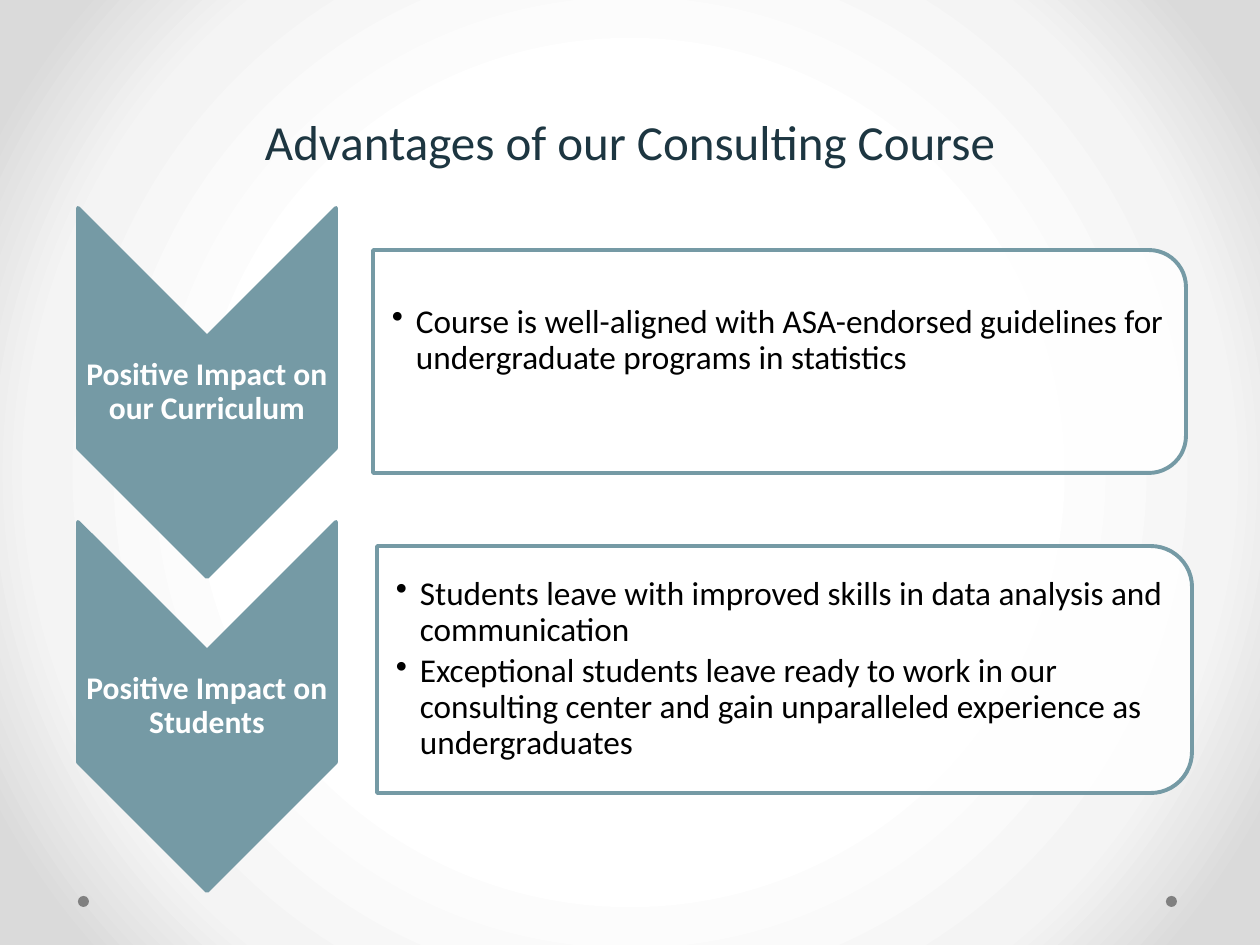
from lxml.etree import SubElement
from pptx import Presentation
from pptx.dml.color import RGBColor
from pptx.enum.shapes import MSO_SHAPE as Shape
from pptx.enum.text import MSO_ANCHOR as Anchor, PP_ALIGN as Align
from pptx.oxml.ns import qn
from pptx.util import Emu, Pt

WHITE = RGBColor(0xFF, 0xFF, 0xFF)
BLACK = RGBColor(0x00, 0x00, 0x00)
NAVY = RGBColor(0x1D, 0x36, 0x41)
TEAL = RGBColor(0x75, 0x9A, 0xA5)
GRAY = RGBColor(0x80, 0x80, 0x80)
PALE = RGBColor(0xF4, 0xF4, 0xF4)
SILVER = RGBColor(0xDA, 0xDA, 0xDA)


def px(length):
    return Emu(round(length * 914400 / 126))


class SlideBuilder:
    font = "Calibri"

    def __init__(self, deck):
        self.page = deck.slides.add_slide(deck.slide_layouts[6])

    def radial_background(self, stops):
        fill = self.page.background.fill
        fill.gradient()
        gradient = self.page.element.find(".//" + qn("a:gradFill"))
        for child in list(gradient):
            gradient.remove(child)
        stop_list = SubElement(gradient, qn("a:gsLst"))
        for percent, color in stops:
            stop = SubElement(stop_list, qn("a:gs"), pos=str(percent * 1000))
            SubElement(stop, qn("a:srgbClr"), val=str(color))
        circle = SubElement(gradient, qn("a:path"), path="circle")
        SubElement(circle, qn("a:fillToRect"), l="50000", t="50000", r="50000", b="50000")

    def shape(self, kind, left, top, width, height, color):
        shape = self.page.shapes.add_shape(kind, px(left), px(top), px(width), px(height))
        shape.shadow.inherit = False
        shape.fill.solid()
        shape.fill.fore_color.rgb = color
        shape.line.fill.background()
        return shape

    def turned_shape(self, kind, left, top, width, height, color):
        shift = (width - height) / 2
        shape = self.shape(kind, left + shift, top - shift, height, width, color)
        shape.rotation = 90
        shape.line.color.rgb = TEAL
        shape.line.width = Pt(2.25)
        SubElement(shape.element.spPr.find(qn("a:ln")), qn("a:round"))
        return shape

    def chevron(self, left, top, width, height):
        self.turned_shape(Shape.CHEVRON, left, top, width, height, TEAL)

    def panel(self, left, top, width, height):
        panel = self.turned_shape(Shape.ROUND_2_SAME_RECTANGLE, left, top, width, height, WHITE)
        color = panel.element.spPr.find(qn("a:solidFill"))[0]
        SubElement(color, qn("a:alpha"), val="90000")

    def text_box(self, left, top, width, height, anchor=Anchor.MIDDLE, insets=(1, 1, 1, 1)):
        box = self.page.shapes.add_textbox(px(left), px(top), px(width), px(height))
        frame = box.text_frame
        frame.word_wrap = True
        frame.vertical_anchor = anchor
        (frame.margin_left, frame.margin_top,
         frame.margin_right, frame.margin_bottom) = map(px, insets)
        return frame

    def add_span(self, para, text, size, color, bold=False):
        span = para.add_run()
        span.text = text
        span.font.name = self.font
        span.font.size = Pt(size)
        span.font.color.rgb = color
        span.font.bold = bold

    def title(self, left, top, width, height, text):
        frame = self.text_box(left, top, width, height, Anchor.TOP, (13, 6, 13, 6))
        para = frame.paragraphs[0]
        para.alignment = Align.CENTER
        self.add_span(para, text, 28, NAVY)

    def label(self, left, top, width, height, text):
        para = self.text_box(left, top, width, height).paragraphs[0]
        para.alignment = Align.CENTER
        para.line_spacing = 0.9
        self.add_span(para, text, 18, WHITE, bold=True)

    def bullets(self, left, top, width, height, items):
        frame = self.text_box(left, top, width, height, insets=(19, 1, 1, 1))
        for index, text in enumerate(items):
            para = frame.add_paragraph() if index else frame.paragraphs[0]
            para.line_spacing = 0.9
            para.space_after = Pt(3)
            props = para._p.get_or_add_pPr()
            props.set("marL", str(px(24)))
            props.set("indent", str(px(-24)))
            SubElement(props, qn("a:buChar"), char="•")
            self.add_span(para, text, 19, BLACK)


def main():
    deck = Presentation()
    deck.slide_width, deck.slide_height = px(1260), px(945)
    page = SlideBuilder(deck)
    page.radial_background([(50, WHITE), (76, PALE), (92, SILVER)])
    for left in (1166, 78):
        page.shape(Shape.OVAL, left, 896, 11, 11, GRAY)
    page.title(63, 105, 1134, 72, "Advantages of our Consulting Course")

    sections = [
        ("Positive Impact on our Curriculum", (373, 250, 813, 223), (373, 261, 801, 160),
         ["Course is well-aligned with ASA-endorsed guidelines for "
          "undergraduate programs in statistics"]),
        ("Positive Impact on Students", (377, 546, 815, 247), (377, 558, 804, 223),
         ["Students leave with improved skills in data analysis and communication",
          "Exceptional students leave ready to work in our consulting center "
          "and gain unparalleled experience as undergraduates"]),
    ]
    for row, (heading, panel, body, items) in enumerate(sections):
        top = 208 + row * 314
        page.chevron(78, top, 258, 369)
        page.label(78, top + 129, 258, 111, heading)
        page.panel(*panel)
        page.bullets(*body, items)
    deck.save("out.pptx")


if __name__ == "__main__":
    main()
